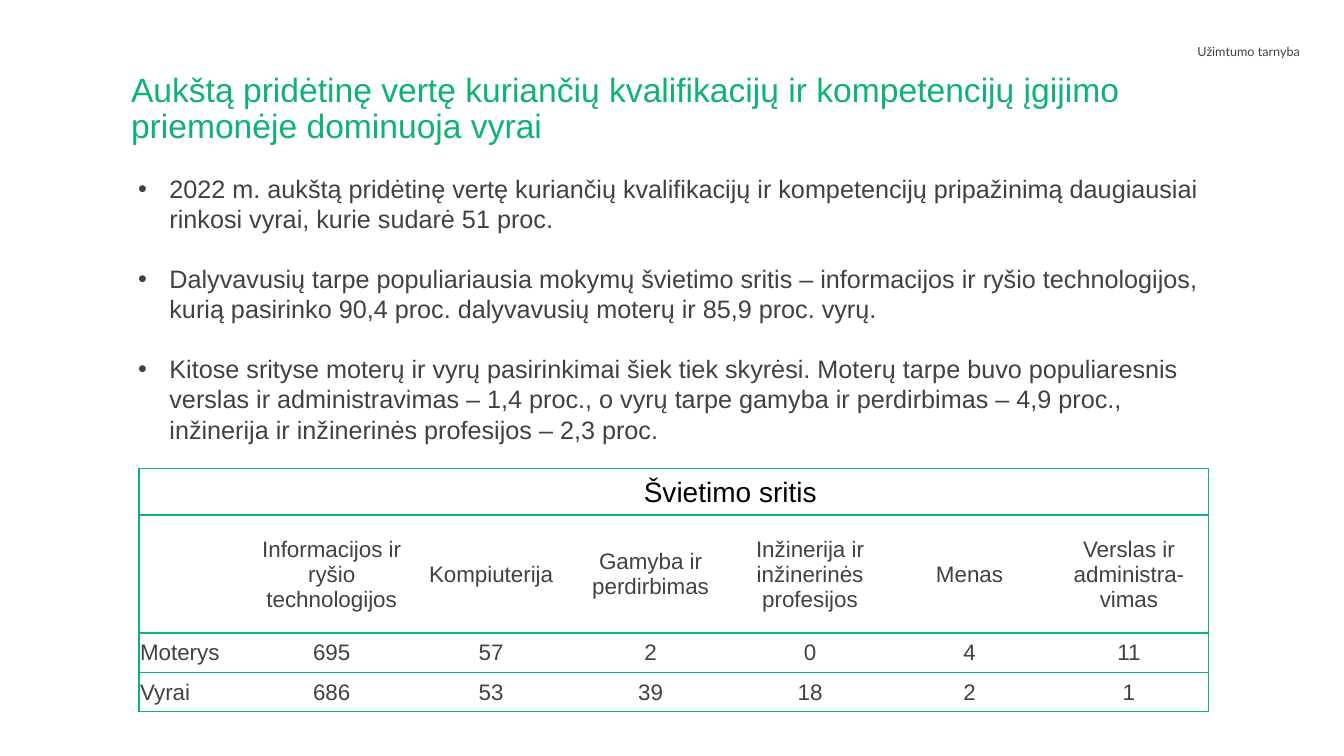
from dataclasses import dataclass

from lxml.etree import SubElement
from pptx import Presentation
from pptx.dml.color import RGBColor as Rgb
from pptx.enum.text import MSO_ANCHOR as Anchor, MSO_AUTO_SIZE as AutoSize, PP_ALIGN as Align
from pptx.oxml.ns import qn
from pptx.util import Inches, Pt


@dataclass(frozen=True)
class Theme:
    font: str = "Arial"
    header_font: str = "Lato"
    title_color: str = "0FB273"
    border_color: str = "0FB271"
    text_color: str = "414144"
    header_color: str = "434244"
    black: str = "000000"
    white: str = "FFFFFF"
    header_size: int = 9
    title_size: int = 24
    body_size: int = 18
    caption_size: int = 20
    cell_size: int = 16
    body_pitch: float = 21.5


THEME = Theme()
SLIDE_W, SLIDE_H = Inches(13.33), Inches(7.5)

HEADER = "Užimtumo tarnyba"
TITLE = ("Aukštą pridėtinę vertę kuriančių kvalifikacijų ir kompetencijų "
         "įgijimo priemonėje dominuoja vyrai")
FINDINGS = [
    "2022 m. aukštą pridėtinę vertę kuriančių kvalifikacijų ir kompetencijų "
    "pripažinimą daugiausiai rinkosi vyrai, kurie sudarė 51 proc.",
    "Dalyvavusių tarpe populiariausia mokymų švietimo sritis – informacijos ir ryšio "
    "technologijos, kurią pasirinko 90,4 proc. dalyvavusių moterų ir 85,9 proc. vyrų.",
    "Kitose srityse moterų ir vyrų pasirinkimai šiek tiek skyrėsi. Moterų tarpe buvo "
    "populiaresnis verslas ir administravimas – 1,4 proc., o vyrų tarpe gamyba ir "
    "perdirbimas – 4,9 proc., inžinerija ir inžinerinės profesijos – 2,3 proc.",
]
FIELD_ROWS = [
    ["", "Švietimo sritis", "", "", "", "", ""],
    ["", "Informacijos ir ryšio technologijos", "Kompiuterija", "Gamyba ir perdirbimas",
     "Inžinerija ir inžinerinės profesijos", "Menas", "Verslas ir administra-vimas"],
    ["Moterys", "695", "57", "2", "0", "4", "11"],
    ["Vyrai", "686", "53", "39", "18", "2", "1"],
]


def area(left, top, width, height):
    """Turn percentages of the slide into a left, top, width, height tuple."""
    return (int(SLIDE_W * left / 100), int(SLIDE_H * top / 100),
            int(SLIDE_W * width / 100), int(SLIDE_H * height / 100))


def place(holder, box):
    holder.left, holder.top, holder.width, holder.height = box


def style(paragraph, size, color, font=THEME.font, align=Align.LEFT):
    paragraph.alignment = align
    paragraph.font.size = Pt(size)
    paragraph.font.name = font
    paragraph.font.color.rgb = Rgb.from_string(color)


def add_header(slide, box):
    frame = slide.shapes.add_textbox(*box).text_frame
    frame.word_wrap = True
    frame.text = HEADER
    style(frame.paragraphs[0], THEME.header_size, THEME.header_color,
          THEME.header_font, Align.RIGHT)


def fill_title(title, box):
    place(title, box)
    frame = title.text_frame
    frame.text = TITLE
    frame.vertical_anchor = Anchor.MIDDLE
    frame.auto_size = AutoSize.NONE
    frame.paragraphs[0].line_spacing = 0.9
    style(frame.paragraphs[0], THEME.title_size, THEME.title_color)


def add_bullet(paragraph, indent):
    properties = paragraph._p.get_or_add_pPr()
    properties.set("marL", str(indent))
    properties.set("indent", str(-indent))
    SubElement(properties, qn("a:buFont"), typeface=THEME.font)
    SubElement(properties, qn("a:buChar"), char="•")


def fill_findings(body, box):
    place(body, box)
    frame = body.text_frame
    frame.text = "\n".join(FINDINGS)
    frame.vertical_anchor = Anchor.TOP
    frame.auto_size = AutoSize.NONE
    for number, finding in enumerate(frame.paragraphs):
        add_bullet(finding, Inches(0.31))
        finding.line_spacing = Pt(THEME.body_pitch)
        finding.space_before = Pt(THEME.body_pitch if number else 0)
        style(finding, THEME.body_size, THEME.text_color)


def set_borders(cell, sides):
    """Draw the named sides (L, R, T, B) and clear the others."""
    properties = cell._tc.get_or_add_tcPr()
    for side in "LRTB":
        line = SubElement(properties, qn(f"a:ln{side}"), w=str(Pt(1)))
        if side in sides:
            fill = SubElement(line, qn("a:solidFill"))
            SubElement(fill, qn("a:srgbClr"), val=THEME.border_color)
        else:
            SubElement(line, qn("a:noFill"))


def fill_cell(cell, text, size, color, align, sides):
    set_borders(cell, sides)
    cell.fill.solid()
    cell.fill.fore_color.rgb = Rgb.from_string(THEME.white)
    cell.margin_left = cell.margin_right = cell.margin_top = Inches(0.01)
    cell.margin_bottom = 0
    cell.vertical_anchor = Anchor.MIDDLE
    cell.text = text
    style(cell.text_frame.paragraphs[0], size, color, align=align)


def add_fields_table(slide, box):
    last = len(FIELD_ROWS[0]) - 1
    table = slide.shapes.add_table(len(FIELD_ROWS), last + 1, *box).table
    table.first_row = table.horz_banding = False

    # Narrow label column, then equal field columns; rows by weight
    label_width = int(box[2] * 0.1055)
    for number, column in enumerate(table.columns):
        column.width = (box[2] - label_width) // last if number else label_width
    weights = [46, 117, 39, 39]
    for row, weight in zip(table.rows, weights):
        row.height = int(box[3] * weight / sum(weights))

    table.cell(0, 1).merge(table.cell(0, last))
    for r, texts in enumerate(FIELD_ROWS):
        for c, text in enumerate(texts):
            is_caption = r == 0 and c == 1
            sides = "TB" + ("L" if c == 0 else "") + ("R" if c == last or is_caption else "")
            fill_cell(table.cell(r, c), text,
                      THEME.caption_size if is_caption else THEME.cell_size,
                      THEME.black if is_caption else THEME.text_color,
                      Align.CENTER if c else Align.LEFT, sides)


def main():
    deck = Presentation()
    deck.slide_width, deck.slide_height = SLIDE_W, SLIDE_H
    slide = deck.slides.add_slide(deck.slide_layouts[1])

    # Heading
    add_header(slide, area(63.7, 5.2, 33.75, 6.25))
    fill_title(slide.shapes.title, area(9, 8.67, 84.55, 11.73))

    # Findings and the figures behind them
    fill_findings(slide.placeholders[1], area(9.53, 22.27, 80.95, 37.73))
    add_fields_table(slide, area(10.35, 62, 79.6, 32.13))

    deck.save("out.pptx")


if __name__ == "__main__":
    main()
